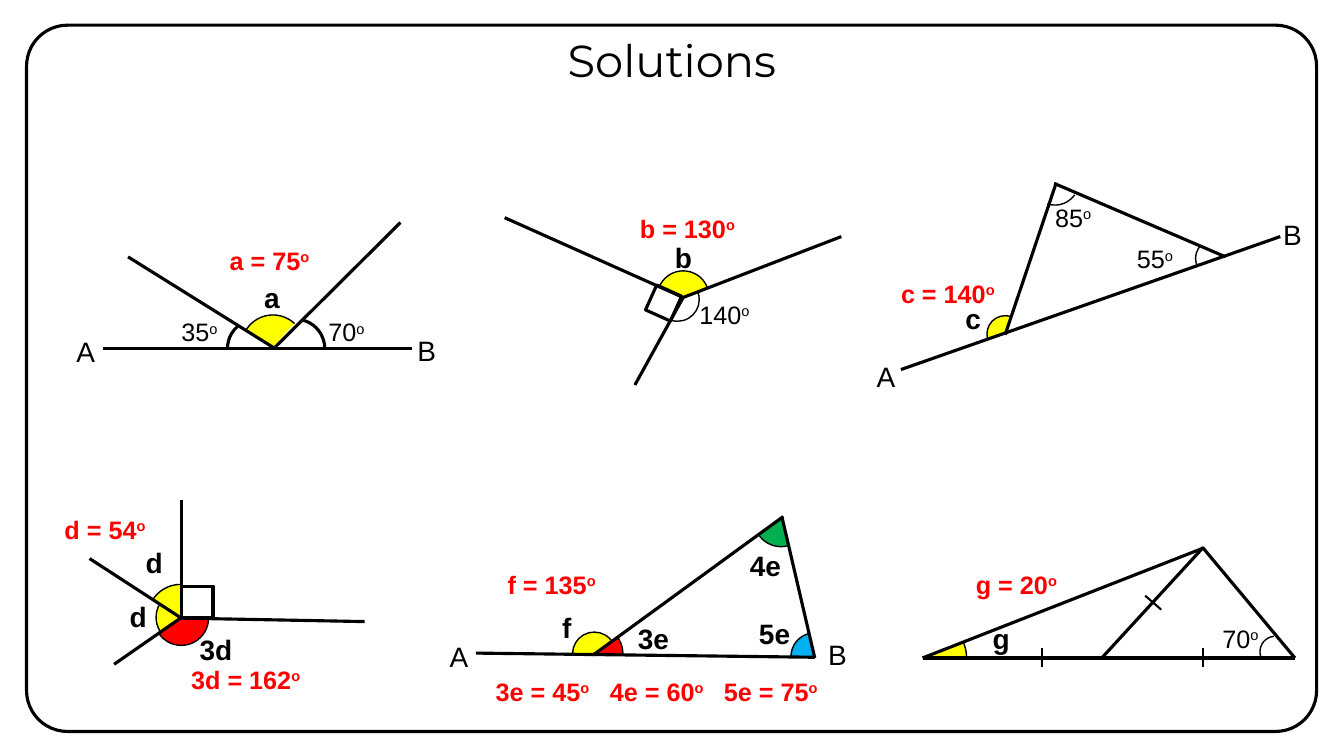
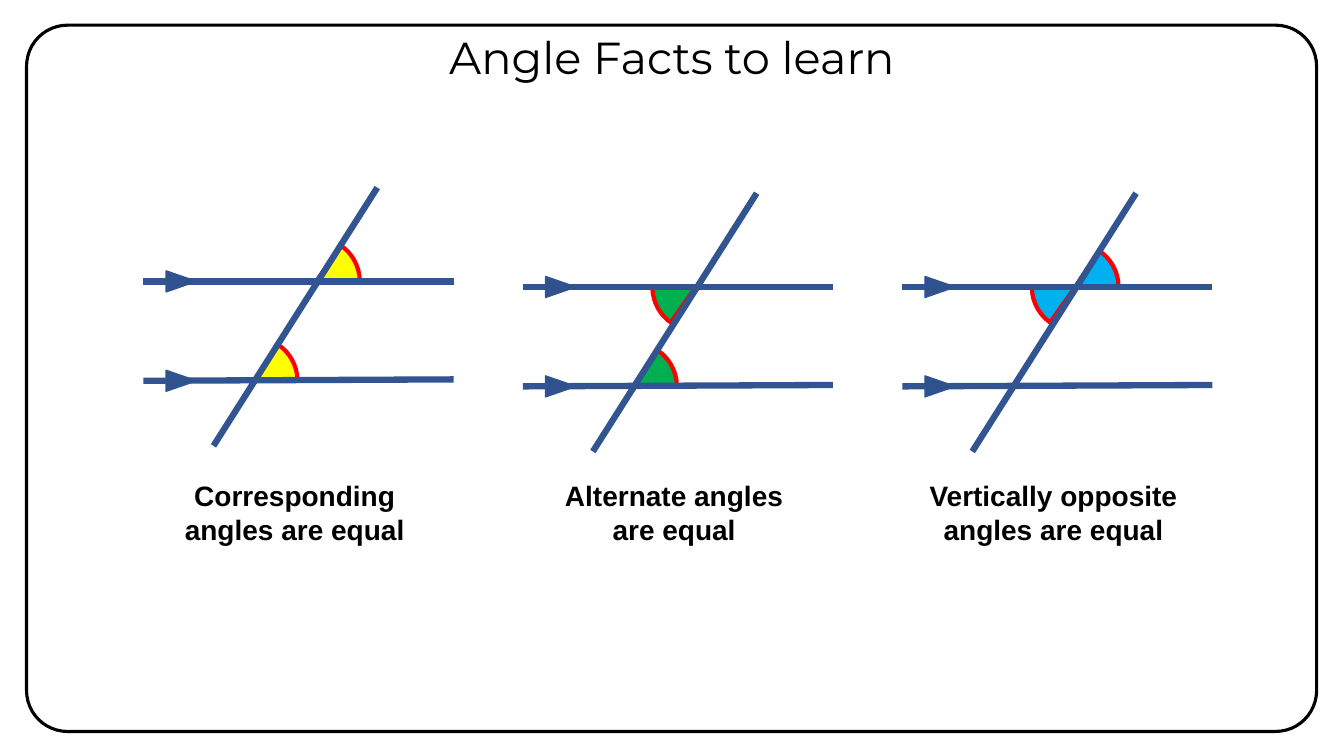
"""Build two slides on angle problems and angle facts."""
from lxml import etree
from pptx import Presentation
from pptx.dml.color import RGBColor
from pptx.enum import shapes, text
from pptx.oxml import ns
from pptx.util import Pt

BLACK = RGBColor(0x00, 0x00, 0x00)
WHITE = RGBColor(0xFF, 0xFF, 0xFF)
RED = RGBColor(0xFF, 0x00, 0x00)
YELLOW = RGBColor(0xFF, 0xFF, 0x00)
GREEN = RGBColor(0x00, 0xB0, 0x50)
SKY = RGBColor(0x00, 0xB0, 0xF0)
NAVY = RGBColor(0x32, 0x54, 0x91)
ARROW = RGBColor(0x2F, 0x52, 0x8F)

WIDTH, HEIGHT = 960, 540
THICK, TICK, THIN = 2.25, 1.5, 1
TITLE_FONT, BODY_FONT = "Montserrat", "Arial"
SHAPE = shapes.MSO_SHAPE

LABEL_STYLES = {
    "point": (20, False, BLACK, False),
    "unknown": (20, True, BLACK, False),
    "angle": (18, False, BLACK, True),
    "answer": (18, True, RED, True),
}

LINE_ANGLES = {
    "arcs": [
        (195, 247.5, 22.5, 213.6, 313.2, YELLOW, THIN),
        (211, 249, 21, 282.7, 0, None, THICK),
        (183.5, 249, 21, 180.3, 229.2, None, THICK),
    ],
    "lines": [
        (286, 159, 195.5, 249, THICK),
        (91.5, 183.5, 196.5, 249, THICK),
        (73.5, 249, 294.5, 249, THICK),
    ],
    "labels": [
        ("angle", "70", 227.5, 222.5),
        ("angle", "35", 122.5, 222.5),
        ("unknown", "a", 181.5, 196.5),
        ("point", "A", 47.5, 235.5),
        ("point", "B", 291, 234.5),
        ("answer", "a = 75", 157, 171.5),
    ],
}

POINT_ANGLES = {
    "arcs": [
        (488, 212, 18.5, 205.2, 339.2, YELLOW, THIN),
        (484, 214, 15.5, 338.5, 106.3, None, THIN),
    ],
    "lines": [
        (488, 212.5, 601, 169, THICK),
        (453.5, 275, 488, 212.5, THICK),
        (360.5, 155.5, 488, 212.5, THICK),
    ],
    "squares": [(474, 216.5, 19.5, 24.2)],
    "labels": [
        ("unknown", "b", 475, 168.5),
        ("angle", "140", 492.5, 210),
        ("answer", "b = 130", 450, 148.5),
    ],
}

EXTERIOR_ANGLE = {
    "arcs": [
        (718, 238.5, 13, 161.6, 289.8, YELLOW, THIN),
        (867, 184.5, 13, 151.7, 218.4, None, THIN),
        (753.5, 129, 17.5, 35.9, 107.7, None, THIN),
    ],
    "lines": [
        (718, 239, 754.5, 130.5, THICK),
        (643.5, 264, 914.5, 169, THICK),
        (753, 131, 875.5, 183.5, THICK),
    ],
    "labels": [
        ("angle", "85", 746.5, 141),
        ("angle", "55", 805, 170.5),
        ("unknown", "c", 682.5, 211.5),
        ("point", "A", 619, 253.5),
        ("point", "B", 909.5, 152),
        ("answer", "c = 140", 636.5, 195),
    ],
}

FULL_TURN = {
    "arcs": [
        (130, 441, 18.5, 143.9, 210.5, YELLOW, THIN),
        (129.5, 441.5, 19.5, 3.6, 144.1, RED, THIN),
        (129, 441, 23.5, 212, 270.9, YELLOW, THIN),
    ],
    "lines": [
        (81.5, 474.5, 129, 441.5, THICK),
        (129, 441.5, 260.5, 444, THICK),
        (64, 399, 129.5, 441.5, THICK),
        (129.5, 357, 129.5, 441.5, THICK),
    ],
    "squares": [(141, 430, 22.5, 0)],
    "labels": [
        ("unknown", "d", 97, 386),
        ("unknown", "d", 85.5, 425),
        ("unknown", "3d", 135.5, 448),
        ("answer", "d = 54", 39, 363.5),
        ("answer", "3d = 162", 129.5, 471),
    ],
}

TRIANGLE_SUM = {
    "arcs": [
        (582, 469, 17, 180.1, 255.1, SKY, THIN),
        (424.5, 467, 15.5, 180.3, 323.2, YELLOW, THIN),
        (424.5, 467, 20.5, 323.6, 0.9, RED, THIN),
        (558, 371, 19.5, 73.6, 144.8, GREEN, THIN),
    ],
    "lines": [
        (340, 466.5, 582, 469.5, THICK),
        (423.5, 468, 559.5, 369, THICK),
        (558.5, 369, 582, 470, THICK),
    ],
    "labels": [
        ("unknown", "3e", 448.5, 440.5),
        ("unknown", "5e", 535, 437),
        ("unknown", "4e", 528.5, 388),
        ("unknown", "f", 394.5, 432.5),
        ("point", "A", 314, 453),
        ("point", "B", 584.5, 452),
        ("answer", "f = 135", 355.5, 403),
        *[("answer", answer, 347 + 81.5 * i, 479.5)
          for i, answer in enumerate(("3e = 45", "4e = 60", "5e = 75"))],
    ],
}

ISOSCELES = {
    "arcs": [
        (663, 470, 27.5, 336.8, 358.9, YELLOW, THIN),
        (911, 465.5, 11, 157.6, 264.7, None, THIN),
    ],
    "lines": [
        (659, 470, 925, 470, THICK),
        (659, 470, 859.5, 391.5, THICK),
        (859, 391, 925, 470, THICK),
        (859.5, 391, 787, 470, THICK),
        (859, 463, 859, 476.5, TICK),
        (744.5, 463, 744.5, 476.5, TICK),
        (818, 425.5, 829.5, 435.5, TICK),
    ],
    "labels": [
        ("angle", "70", 866, 441.5),
        ("unknown", "g", 702, 440.5),
        ("answer", "g = 20", 690, 403),
    ],
}

DIAGRAMS = [LINE_ANGLES, POINT_ANGLES, EXTERIOR_ANGLE,
            FULL_TURN, TRIANGLE_SUM, ISOSCELES]

UPPER, LOWER = (123.5, 0), (79, 71)
FACING_RIGHT, FACING_LEFT = (304.3, 359.8), (125.2, 180.7)
FACTS = [
    ("Corresponding angles are equal", 201, YELLOW,
     [(UPPER, FACING_RIGHT), (LOWER, FACING_RIGHT)]),
    ("Alternate angles are equal", 205, GREEN,
     [(UPPER, FACING_LEFT), (LOWER, FACING_RIGHT)]),
    ("Vertically opposite angles are equal", 205, SKY,
     [(UPPER, FACING_LEFT), (UPPER, FACING_RIGHT)]),
]


def add_shape(s, kind, x, y, w, h, fill=None, line=BLACK, weight=THICK):
    """Add an outlined shape, filled if a colour is given."""
    sp = s.shapes.add_shape(kind, Pt(x), Pt(y), Pt(w), Pt(h))
    sp.shadow.inherit = False
    if fill is None:
        sp.fill.background()
    else:
        sp.fill.solid()
        sp.fill.fore_color.rgb = fill
    sp.line.color.rgb = line
    sp.line.width = Pt(weight)
    return sp


def add_sector(s, kind, x, y, radius, start, end, fill, line, weight):
    """Add an arc or pie around a centre, with clockwise degrees."""
    sp = add_shape(s, kind, x - radius, y - radius, 2 * radius, 2 * radius,
                   fill, line, weight)
    for i, degrees in enumerate((start, end)):
        sp.adjustments[i] = degrees * 0.6


def add_line(s, x1, y1, x2, y2, weight, color=BLACK):
    """Add a straight line without a shadow."""
    line = s.shapes.add_connector(shapes.MSO_CONNECTOR.STRAIGHT,
                                  Pt(x1), Pt(y1), Pt(x2), Pt(y2))
    line.line.color.rgb = color
    line.line.width = Pt(weight)
    etree.SubElement(line._element.spPr, ns.qn("a:effectLst"))


def add_run(p, content, size, bold=False, color=BLACK, font=BODY_FONT):
    """Add one formatted run to a paragraph."""
    r = p.add_run()
    r.text = content
    r.font.size = Pt(size)
    r.font.bold = bold
    r.font.name = font
    r.font.color.rgb = color
    return r


def add_text(s, x, y, w, h, align=text.PP_ALIGN.LEFT):
    """Add a wrapping text box and return its paragraph."""
    tf = s.shapes.add_textbox(Pt(x), Pt(y), Pt(w), Pt(h)).text_frame
    tf.word_wrap = True
    p = tf.paragraphs[0]
    p.alignment = align
    return p


def add_label(s, style, content, x, y):
    """Add a diagram label, with a raised degree sign for angles."""
    size, bold, color, degree = LABEL_STYLES[style]
    width = 18 + 0.55 * size * (len(content) + degree)
    p = add_text(s, x, y, width, 1.2 * size + 7.2)
    add_run(p, content, size, bold, color)
    if degree:
        r = add_run(p, "o", size, bold, color)
        r._r.get_or_add_rPr().set("baseline", "30000")


def add_slide(prs, title, title_top):
    """Add a slide with the rounded frame and a centred title."""
    s = prs.slides.add_slide(prs.slide_layouts[6])
    frame = add_shape(s, SHAPE.ROUNDED_RECTANGLE, 19, 18, 921.5, 504.5, WHITE)
    frame.adjustments[0] = 0.058
    p = add_text(s, 280, title_top, 400, 46, text.PP_ALIGN.CENTER)
    add_run(p, title, 32, font=TITLE_FONT)
    return s


def add_diagram(s, diagram):
    """Draw one angle problem with its answers."""
    for x, y, radius, start, end, fill, weight in diagram["arcs"]:
        add_sector(s, SHAPE.ARC, x, y, radius, start, end, fill, BLACK, weight)
    for line in diagram["lines"]:
        add_line(s, *line)
    for x, y, side, turn in diagram.get("squares", ()):
        sp = add_shape(s, SHAPE.RECTANGLE, x - side / 2, y - side / 2, side, side)
        sp.rotation = turn
    for label in diagram["labels"]:
        add_label(s, *label)


def add_fact(s, x, y, caption, fill, sectors):
    """Draw parallel lines, a transversal, marked angles and a caption."""
    for (dx, dy), (start, end) in sectors:
        add_sector(s, SHAPE.PIE, x + dx, y + dy, 31, start, end, fill, RED, 3)
    for x1, y1, x2, y2 in ((0, 0, 221.5, 0), (0, 71, 221.5, 70),
                           (50, 117.5, 167, -67)):
        add_line(s, x + x1, y + y1, x + x2, y + y2, 4.5, NAVY)
    for dy in (0, 71):
        sp = add_shape(s, SHAPE.ISOSCELES_TRIANGLE, x + 19.5, y + dy - 10.8,
                       15, 21.6, ARROW, NAVY, 1)
        sp.rotation = 90
    p = add_text(s, x + 9, 338.5, 198, 55.5, text.PP_ALIGN.CENTER)
    add_run(p, caption, 20, True)


def main():
    """Build and save the presentation."""
    prs = Presentation()
    prs.slide_width, prs.slide_height = Pt(WIDTH), Pt(HEIGHT)
    s = add_slide(prs, "Solutions", 19.5)
    for diagram in DIAGRAMS:
        add_diagram(s, diagram)
    s = add_slide(prs, "Angle Facts to learn", 17.5)
    for i, (caption, y, fill, sectors) in enumerate(FACTS):
        add_fact(s, 102.5 + 271 * i, y, caption, fill, sectors)
    prs.save("out.pptx")


if __name__ == "__main__":
    main()
